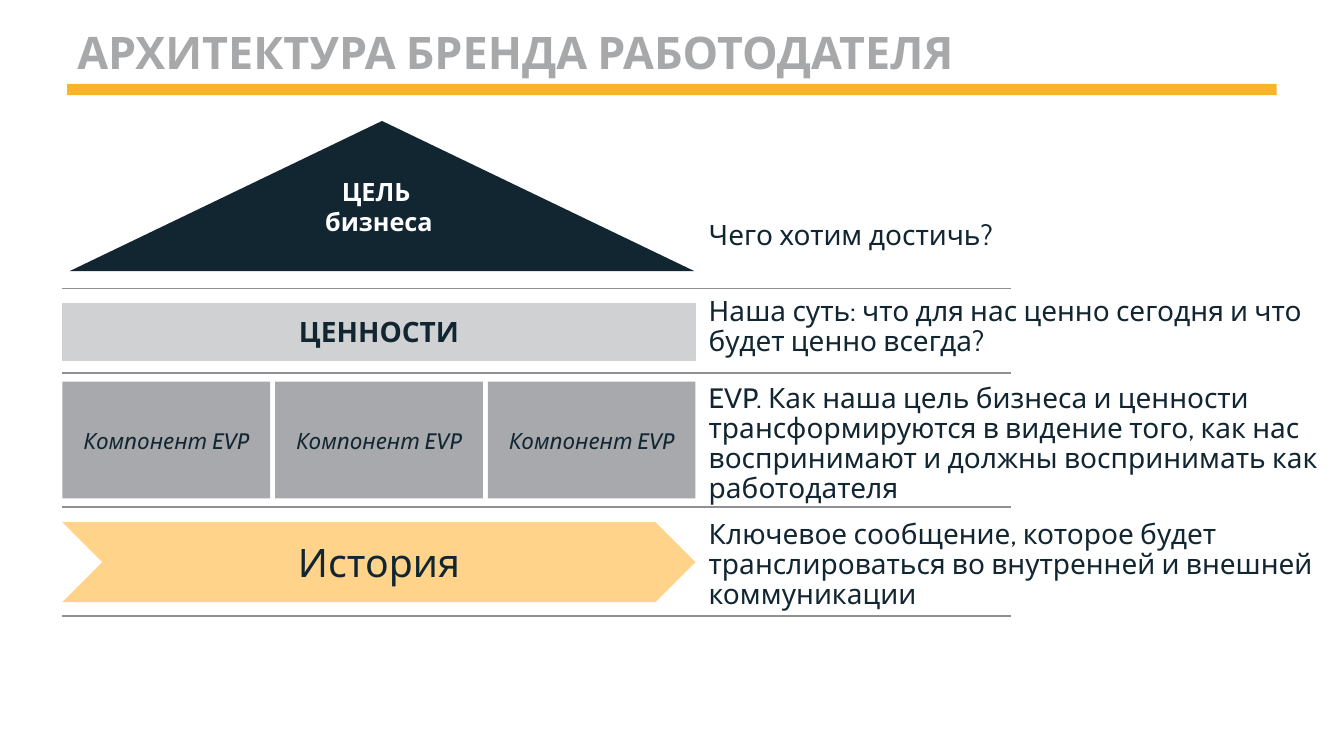
from dataclasses import dataclass

from pptx import Presentation
from pptx.dml.color import RGBColor
from pptx.enum.shapes import MSO_CONNECTOR as Connector, MSO_SHAPE as Shape
from pptx.enum.text import MSO_ANCHOR as Anchor, MSO_AUTO_SIZE as AutoSize, PP_ALIGN as Align
from pptx.oxml.ns import qn
from pptx.slide import Slide
from pptx.text.text import TextFrame
from pptx.util import Pt

FONT = "Cabin"
NAVY = RGBColor(0x12, 0x26, 0x32)
WHITE = RGBColor(0xFF, 0xFF, 0xFF)
AMBER = RGBColor(0xFA, 0xB4, 0x28)
LIGHT_AMBER = RGBColor(0xFF, 0xD4, 0x8A)
LIGHT_GRAY = RGBColor(0xD0, 0xD1, 0xD3)
GRAY = RGBColor(0xA7, 0xA9, 0xAC)
TITLE_GRAY = RGBColor(0xA6, 0xA8, 0xAA)
RULE_GRAY = RGBColor(0x8F, 0x91, 0x95)

LEFT = 44.6
DIAGRAM_WIDTH = 452.2
COMPONENT_COUNT = 3
COMPONENT_GAP = 3.6
COMPONENT_WIDTH = (DIAGRAM_WIDTH - COMPONENT_GAP * (COMPONENT_COUNT - 1)) / COMPONENT_COUNT
RULE_RIGHT = 722.2
RULE_TOPS = (205.9, 266.4, 362.2, 439.9)


@dataclass(frozen=True)
class Box:
    left: float
    top: float
    width: float
    height: float

    def lengths(self) -> tuple[Pt, Pt, Pt, Pt]:
        return Pt(self.left), Pt(self.top), Pt(self.width), Pt(self.height)


@dataclass(frozen=True)
class Style:
    size: float
    color: RGBColor = NAVY
    bold: bool = False
    italic: bool = False
    align: Align = Align.CENTER
    anchor: Anchor = Anchor.MIDDLE
    margin: float = 0
    spacing: float = 1.0


@dataclass(frozen=True)
class Block:
    kind: Shape
    box: Box
    fill: RGBColor
    text: str = ""
    style: Style = Style(20)
    adjustment: float | None = None


@dataclass(frozen=True)
class Description:
    top: float
    text: str


TITLE_STYLE = Style(32, TITLE_GRAY, bold=True, align=Align.LEFT, margin=7.2)
GOAL_STYLE = Style(18, WHITE, bold=True, anchor=Anchor.TOP)
COMPONENT_STYLE = Style(16, italic=True, margin=7.2)
DESCRIPTION_STYLE = Style(20, align=Align.LEFT, anchor=Anchor.TOP, spacing=0.9)

BLOCKS = [
    Block(Shape.RECTANGLE, Box(48, 60, 864, 8), AMBER),
    Block(Shape.ISOSCELES_TRIANGLE, Box(49.7, 86.4, 446.4, 107.3), NAVY),
    Block(Shape.TRAPEZOID, Box(LEFT, 216.2, DIAGRAM_WIDTH, 41.6), LIGHT_GRAY,
          "ЦЕННОСТИ", Style(20, bold=True), 0),
    *(Block(Shape.RECTANGLE,
            Box(LEFT + index * (COMPONENT_WIDTH + COMPONENT_GAP), 272.6, COMPONENT_WIDTH, 83.5),
            GRAY, "Компонент EVP", COMPONENT_STYLE)
      for index in range(COMPONENT_COUNT)),
    Block(Shape.CHEVRON, Box(LEFT, 373, DIAGRAM_WIDTH, 57), LIGHT_AMBER,
          "История", Style(28), 0.5),
]

DESCRIPTIONS = [
    Description(158.4, "Чего хотим достичь?"),
    Description(212.4, "Наша суть: что для нас ценно сегодня и что будет ценно всегда?"),
    Description(274.3, "EVP. Как наша цель бизнеса и ценности трансформируются в видение того, "
                       "как нас воспринимают и должны воспринимать как работодателя"),
    Description(371.5, "Ключевое сообщение, которое будет транслироваться во внутренней "
                       "и внешней коммуникации"),
]


def write(frame: TextFrame, lines: list[str], style: Style) -> None:
    frame.word_wrap = True
    frame.auto_size = AutoSize.NONE
    frame.vertical_anchor = style.anchor
    frame.margin_left = frame.margin_right = Pt(style.margin)
    frame.margin_top = frame.margin_bottom = Pt(style.margin / 2)
    for index, line in enumerate(lines):
        paragraph = frame.add_paragraph() if index else frame.paragraphs[0]
        paragraph.alignment = style.align
        paragraph.line_spacing = style.spacing
        run = paragraph.add_run()
        run.text = line
        run.font.name = FONT
        run.font.size = Pt(style.size)
        run.font.bold = style.bold
        run.font.italic = style.italic
        run.font.color.rgb = style.color


def add_title(slide: Slide, text: str) -> None:
    title = slide.shapes.title
    title.left, title.top, title.width, title.height = Box(48, 19.5, 864, 34.5).lengths()
    write(title.text_frame, [text], TITLE_STYLE)


def add_block(slide: Slide, block: Block) -> None:
    shape = slide.shapes.add_shape(block.kind, *block.box.lengths())
    shape.shadow.inherit = False
    shape.fill.solid()
    shape.fill.fore_color.rgb = block.fill
    shape.line.fill.background()
    if block.adjustment is not None:
        shape.adjustments[0] = block.adjustment
    if block.text:
        write(shape.text_frame, [block.text], block.style)


def add_text(slide: Slide, box: Box, lines: list[str], style: Style) -> None:
    write(slide.shapes.add_textbox(*box.lengths()).text_frame, lines, style)


def add_rule(slide: Slide, top: float) -> None:
    rule = slide.shapes.add_connector(Connector.STRAIGHT, Pt(LEFT), Pt(top), Pt(RULE_RIGHT), Pt(top))
    rule.line.color.rgb = RULE_GRAY
    rule.line.width = Pt(1)
    properties = rule._element.spPr
    properties.append(properties.makeelement(qn("a:effectLst"), {}))


def main() -> None:
    presentation = Presentation()
    presentation.slide_width, presentation.slide_height = Pt(960), Pt(540)
    slide = presentation.slides.add_slide(presentation.slide_layouts[5])
    add_title(slide, "АРХИТЕКТУРА БРЕНДА РАБОТОДАТЕЛЯ")
    for block in BLOCKS:
        add_block(slide, block)
    add_text(slide, Box(87.1, 126, 367.2, 72), ["ЦЕЛЬ ", "бизнеса"], GOAL_STYLE)
    for top in RULE_TOPS:
        add_rule(slide, top)
    for description in DESCRIPTIONS:
        add_text(slide, Box(506.2, description.top, 438.5, 50.4), [description.text], DESCRIPTION_STYLE)
    presentation.save("out.pptx")


if __name__ == "__main__":
    main()
